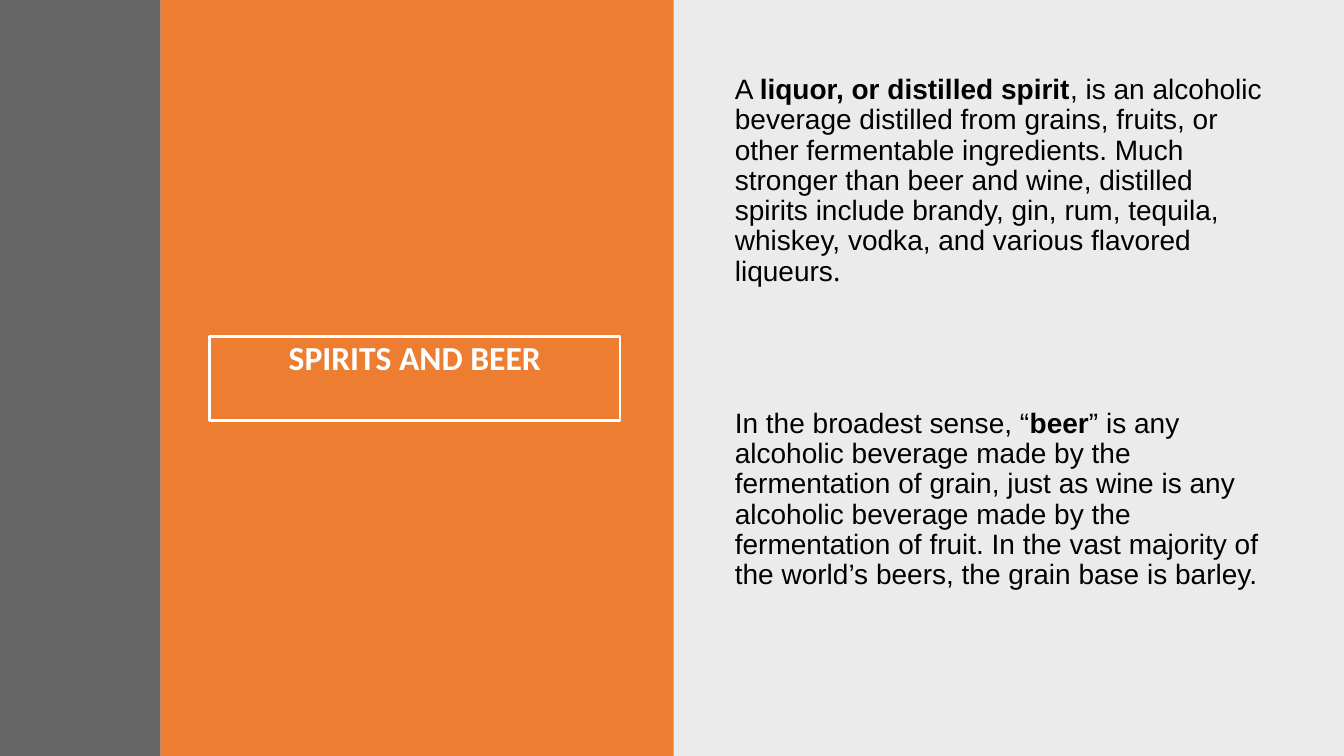
"""Build the slide that defines spirits and beer beside a colour-banded title."""
import pptx
import pptx.dml.color
import pptx.enum.shapes
import pptx.enum.text
import pptx.oxml.ns
import pptx.util
from lxml import etree

WIDTH, HEIGHT = 13.33, 7.5

presentation = pptx.Presentation()
presentation.slide_width = pptx.util.Inches(WIDTH)
presentation.slide_height = pptx.util.Inches(HEIGHT)
slide = presentation.slides.add_slide(presentation.slide_layouts[6])


def color(hex_value):
    return pptx.dml.color.RGBColor.from_string(hex_value)


def add_text(paragraph, text, formats):
    run = paragraph.add_run()
    run.text = text
    run.font.color.rgb = color(formats["color"])
    for name in ("name", "size", "bold"):
        setattr(run.font, name, formats[name])


gray_edge, orange_edge, middle = 1.59, 6.68, WIDTH / 2
panels = [
    (middle, WIDTH, "000000", 8),
    (gray_edge, orange_edge, "ED7D31", 100),
    (0, gray_edge, "404040", 80),
]
for left, right, fill, opacity in panels:
    panel = slide.shapes.add_shape(
        pptx.enum.shapes.MSO_SHAPE.RECTANGLE,
        pptx.util.Inches(left), 0,
        pptx.util.Inches(right - left), presentation.slide_height)
    panel.shadow.inherit = False
    panel.line.fill.background()
    panel.fill.solid()
    panel.fill.fore_color.rgb = color(fill)
    if opacity < 100:
        tint = panel.fill._xPr.find(".//" + pptx.oxml.ns.qn("a:srgbClr"))
        alpha = etree.SubElement(tint, pptx.oxml.ns.qn("a:alpha"))
        alpha.set("val", str(opacity * 1000))

title_format = {"name": "Calibri", "size": pptx.util.Pt(24),
                "color": "FFFFFF", "bold": True}
title = slide.shapes.add_textbox(
    *map(pptx.util.Inches, (2.08, 3.34, 4.07, 0.83)))
title.line.color.rgb = color("FFFFFF")
title.line.width = pptx.util.Pt(2)
title.text_frame.word_wrap = True
heading = title.text_frame.paragraphs[0]
heading.alignment = pptx.enum.text.PP_ALIGN.CENTER
heading.line_spacing = 0.9
add_text(heading, "SPIRITS AND BEER", title_format)

body_format = {"name": "Arial", "size": pptx.util.Pt(20),
               "color": "000000", "bold": False}
definitions = [
    [("A ", {}), ("liquor, or distilled spirit", {"bold": True}),
     (", is an alcoholic beverage distilled from grains, fruits, or other "
      "fermentable ingredients. Much stronger than beer and wine, distilled "
      "spirits include brandy, gin, rum, tequila, whiskey, vodka, and various "
      "flavored liqueurs", {}), (".", {"name": "Open Sans"})],
    [("In the broadest sense, “", {}), ("beer", {"bold": True}),
     ("” is any alcoholic beverage made by the fermentation of grain, just as "
      "wine is any alcoholic beverage made by the fermentation of fruit. In "
      "the vast majority of the world’s beers, the grain base is barley.", {})],
]
first_top, row_pitch = 0.7, 3.31
for row, pieces in enumerate(definitions):
    box = slide.shapes.add_textbox(
        *map(pptx.util.Inches, (7.19, first_top + row * row_pitch, 5.53, 2.79)))
    box.text_frame.word_wrap = True
    paragraph = box.text_frame.paragraphs[0]
    paragraph.line_spacing = 0.9
    for text, changes in pieces:
        add_text(paragraph, text, {**body_format, **changes})

presentation.save("out.pptx")
